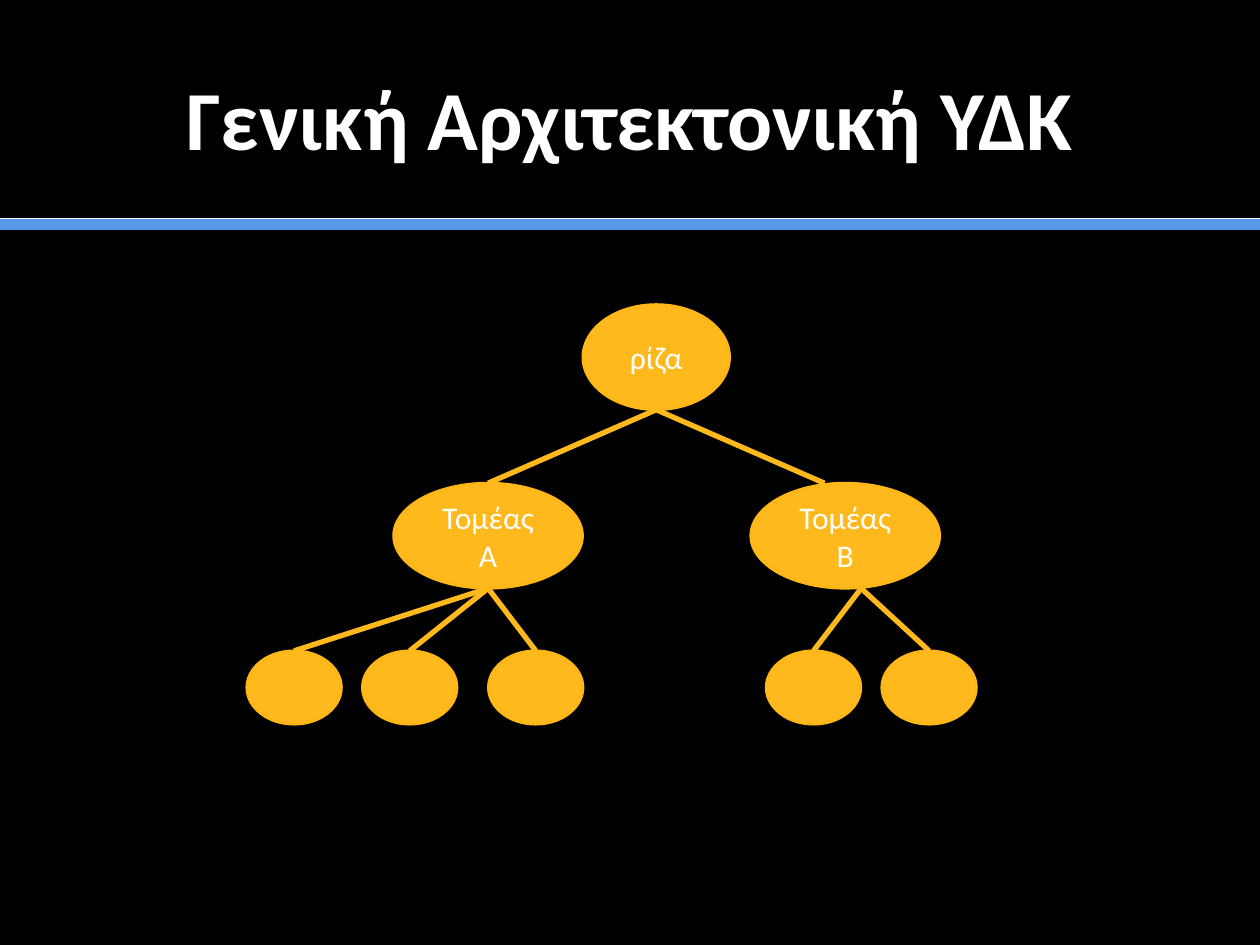
from dataclasses import dataclass

from lxml.etree import SubElement
from pptx import Presentation
from pptx.dml.color import RGBColor
from pptx.enum.shapes import MSO_CONNECTOR, MSO_SHAPE
from pptx.enum.text import MSO_ANCHOR, PP_ALIGN
from pptx.oxml.ns import qn
from pptx.slide import Slide
from pptx.text.text import TextFrame
from pptx.util import Cm, Pt


@dataclass(frozen=True)
class Theme:
    """Colours, font and sizes of the slide."""
    back: str = "000000"
    ink: str = "FFFFFF"
    band: str = "5799E8"
    gold: str = "FFB91D"
    edge: str = "FFB717"
    font: str = "Calibri"
    head: float = 48
    body: float = 18


@dataclass(frozen=True)
class Level:
    """Top and oval size shared by one level of the tree, in cm."""
    top: float
    wide: float
    high: float


@dataclass(frozen=True)
class Node:
    """An oval of the tree, with shifts for where links meet it."""
    mid: float
    level: Level
    label: str = ""
    kids: tuple["Node", ...] = ()
    enter: float = 0
    leave: float = 0


LOOK = Theme()
TOP = Level(6.14, 2.96, 2.12)
SECTOR = Level(9.74, 3.81, 2.12)
LEAF = Level(13.12, 1.91, 1.48)
TREE = Node(13.23, TOP, "ρίζα", (
    Node(9.84, SECTOR, "Τομέας Α",
         tuple(Node(x, LEAF) for x in (5.93, 8.26, 10.8))),
    Node(17.04, SECTOR, "Τομέας Β",
         tuple(Node(x, LEAF) for x in (16.4, 18.73)), -0.42, 0.32),
))


def tint(code: str) -> RGBColor:
    """Turn a hex code into a colour."""
    return RGBColor.from_string(code)


def write(frame: TextFrame, text: str, size: float, bold: bool = False) -> None:
    """Put one centred run into a text frame."""
    frame.word_wrap = True
    frame.vertical_anchor = MSO_ANCHOR.MIDDLE
    para = frame.paragraphs[0]
    para.alignment = PP_ALIGN.CENTER
    run = para.add_run()
    run.text = text
    run.font.name = LOOK.font
    run.font.size = Pt(size)
    run.font.bold = bold
    run.font.color.rgb = tint(LOOK.ink)


def link(slide: Slide, start: tuple[float, float], end: tuple[float, float],
         color: str, width: float) -> None:
    """Draw a straight line between two points in cm."""
    line = slide.shapes.add_connector(
        MSO_CONNECTOR.STRAIGHT, *map(Cm, start), *map(Cm, end))
    line.line.color.rgb = tint(color)
    line.line.width = Pt(width)
    SubElement(line._element.spPr, qn("a:effectLst"))


def grow(slide: Slide, node: Node) -> None:
    """Draw a node, then its children and the links to them."""
    level = node.level
    oval = slide.shapes.add_shape(
        MSO_SHAPE.OVAL, Cm(node.mid - level.wide / 2), Cm(level.top),
        Cm(level.wide), Cm(level.high))
    oval.shadow.inherit = False
    oval.fill.solid()
    oval.fill.fore_color.rgb = tint(LOOK.gold)
    oval.line.color.rgb = tint(LOOK.edge)
    oval.line.width = Pt(1.5)
    if node.label:
        write(oval.text_frame, node.label, LOOK.body)
    for kid in node.kids:
        grow(slide, kid)
        link(slide, (node.mid + node.leave, level.top + level.high),
             (kid.mid + kid.enter, kid.level.top), LOOK.gold, 3)


def main() -> None:
    """Build and save the slide."""
    deck = Presentation()
    deck.slide_width, deck.slide_height = Cm(25.4), Cm(19.05)
    slide = deck.slides.add_slide(deck.slide_layouts[5])
    slide.background.fill.solid()
    slide.background.fill.fore_color.rgb = tint(LOOK.back)
    link(slide, (0, 4.52), (25.4, 4.52), LOOK.band, 7)
    link(slide, (0, 4.4), (25.4, 4.4), LOOK.ink, 0.5)
    title = slide.shapes.title
    title.left, title.top = Cm(1.27), Cm(0.76)
    title.width, title.height = Cm(22.86), Cm(3.18)
    write(title.text_frame, "Γενική Αρχιτεκτονική ΥΔΚ", LOOK.head, True)
    grow(slide, TREE)
    deck.save("out.pptx")


if __name__ == "__main__":
    main()
